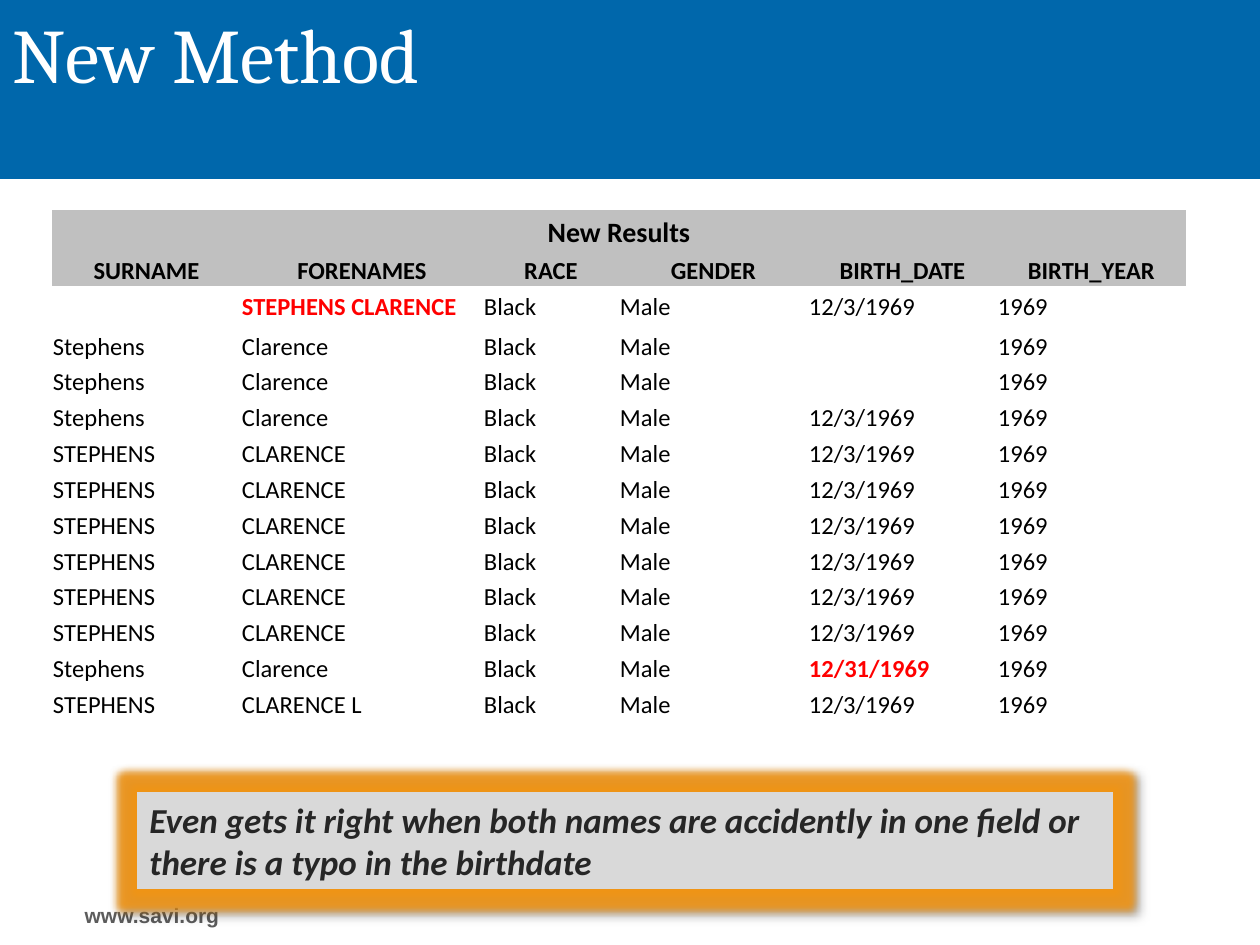
import pptx
import pptx.dml.color
import pptx.enum.shapes
import pptx.enum.text
import pptx.oxml
import pptx.oxml.ns
import pptx.util
from lxml import etree

EMU_PER_PX = 914400 / 126
COLORS = {"blue": "0067AB", "white": "FFFFFF", "gray": "C0C0C0", "black": "000000",
          "red": "FF0000", "footer": "5C5C5C", "panel": "D9D9D9", "dark": "262626",
          "glow": "F09415"}
NO_GRID_STYLE = "{2D5ABB26-0587-4C30-8999-92F81FD0307C}"

TITLE = "New Method"
SITE = "www.savi.org"
CALLOUT = ("Even gets it right when both names are accidently in one field "
           "or there is a typo in the birthdate")
TABLE_TITLE = "New Results"
HEADERS = ["SURNAME", "FORENAMES", "RACE", "GENDER", "BIRTH_DATE", "BIRTH_YEAR"]
# Surname, forenames, birth date; race, gender and birth year are shared.
PEOPLE = [
    ("", "STEPHENS CLARENCE", "12/3/1969"),
    *[("Stephens", "Clarence", "")] * 2,
    ("Stephens", "Clarence", "12/3/1969"),
    *[("STEPHENS", "CLARENCE", "12/3/1969")] * 6,
    ("Stephens", "Clarence", "12/31/1969"),
    ("STEPHENS", "CLARENCE L", "12/3/1969"),
]
ERRORS = {"STEPHENS CLARENCE", "12/31/1969"}
COLUMN_WIDTHS = [189, 242, 136, 189, 189, 189]
ROW_HEIGHTS = [39, 34, 40] + [34] * 11
ALIGN = pptx.enum.text.PP_ALIGN
ANCHOR = pptx.enum.text.MSO_ANCHOR


def px(value):
    return pptx.util.Emu(round(value * EMU_PER_PX))


def rgb(name):
    return pptx.dml.color.RGBColor.from_string(COLORS[name])


def write(paragraph, text, color, size, **font_format):
    run = paragraph.add_run()
    run.text = text
    run.font.size = pptx.util.Pt(size)
    run.font.color.rgb = rgb(color)
    for key, value in font_format.items():
        setattr(run.font, key, value)


def add_box(slide, box, fill):
    shape = slide.shapes.add_shape(pptx.enum.shapes.MSO_SHAPE.RECTANGLE, *map(px, box))
    shape.shadow.inherit = False
    shape.fill.solid()
    shape.fill.fore_color.rgb = rgb(fill)
    shape.line.fill.background()
    return shape


def add_text(slide, box, text, align, color, size, **font_format):
    frame = slide.shapes.add_textbox(*map(px, box)).text_frame
    frame.word_wrap = True
    frame.paragraphs[0].alignment = align
    write(frame.paragraphs[0], text, color, size, **font_format)


def add_glow_and_shadow(shape):
    effects = shape.element.spPr.find(pptx.oxml.ns.qn("a:effectLst"))
    namespace = pptx.oxml.ns.nsdecls("a")
    for xml in (
        f'<a:glow {namespace} rad="101600"><a:srgbClr val="{COLORS["glow"]}">'
        '<a:alpha val="90000"/></a:srgbClr></a:glow>',
        f'<a:outerShdw {namespace} blurRad="50800" dist="38100" dir="2700000" '
        f'algn="tl" rotWithShape="0"><a:srgbClr val="{COLORS["black"]}">'
        '<a:alpha val="40000"/></a:srgbClr></a:outerShdw>',
    ):
        effects.append(pptx.oxml.parse_xml(xml))


def fill_cell(cell, text, size=14, header=False):
    cell.fill.solid()
    cell.fill.fore_color.rgb = rgb("gray" if header else "white")
    cell.vertical_anchor = ANCHOR.MIDDLE if header else ANCHOR.TOP
    for side in ("left", "right", "top", "bottom"):
        setattr(cell, f"margin_{side}", px(1))
    paragraph = cell.text_frame.paragraphs[0]
    paragraph.alignment = ALIGN.CENTER if header else ALIGN.LEFT
    paragraph.line_spacing = 1.15
    if text:
        error = text in ERRORS
        write(paragraph, text, "red" if error else "black", size,
              name="Calibri", bold=header or error)
    else:  # keeps an empty cell from growing its row
        etree.SubElement(paragraph._p, pptx.oxml.ns.qn("a:endParaRPr"), sz=str(size * 100))


def add_results(slide):
    rows = [[TABLE_TITLE] + [""] * 5, HEADERS]
    rows += [[surname, forenames, "Black", "Male", birth_date, "1969"]
             for surname, forenames, birth_date in PEOPLE]
    frame = slide.shapes.add_table(len(rows), len(HEADERS), px(52), px(210),
                                   px(sum(COLUMN_WIDTHS)), px(sum(ROW_HEIGHTS)))
    results = frame.table
    results.first_row = results.horz_banding = False
    for style in frame.element.iter(pptx.oxml.ns.qn("a:tableStyleId")):
        style.text = NO_GRID_STYLE
    for column, width in zip(results.columns, COLUMN_WIDTHS):
        column.width = px(width)
    for index, (texts, height) in enumerate(zip(rows, ROW_HEIGHTS)):
        results.rows[index].height = px(height)
        for cell, text in zip(results.rows[index].cells, texts):
            fill_cell(cell, text, 16 if index == 0 else 14, index < 2)
    results.cell(0, 0).merge(results.cell(0, len(HEADERS) - 1))


def add_callout(slide):
    callout = add_box(slide, (137, 792, 976, 97), "panel")
    add_glow_and_shadow(callout)
    frame = callout.text_frame
    frame.word_wrap = True
    frame.vertical_anchor = ANCHOR.TOP
    frame.paragraphs[0].alignment = ALIGN.LEFT
    write(frame.paragraphs[0], CALLOUT, "dark", 20, name="Calibri", bold=True, italic=True)


def main():
    deck = pptx.Presentation()
    deck.slide_width, deck.slide_height = px(1260), px(945)
    slide = deck.slides.add_slide(deck.slide_layouts[6])
    add_box(slide, (0, 0, 1260, 179), "blue")
    add_text(slide, (21, 896, 262, 38), SITE, ALIGN.CENTER, "footer", 12,
             name="Arial", bold=True)
    add_text(slide, (0, 0, 1218, 179), TITLE, ALIGN.LEFT, "white", 44, name="Cambria")
    add_results(slide)
    add_callout(slide)
    deck.save("out.pptx")


if __name__ == "__main__":
    main()
